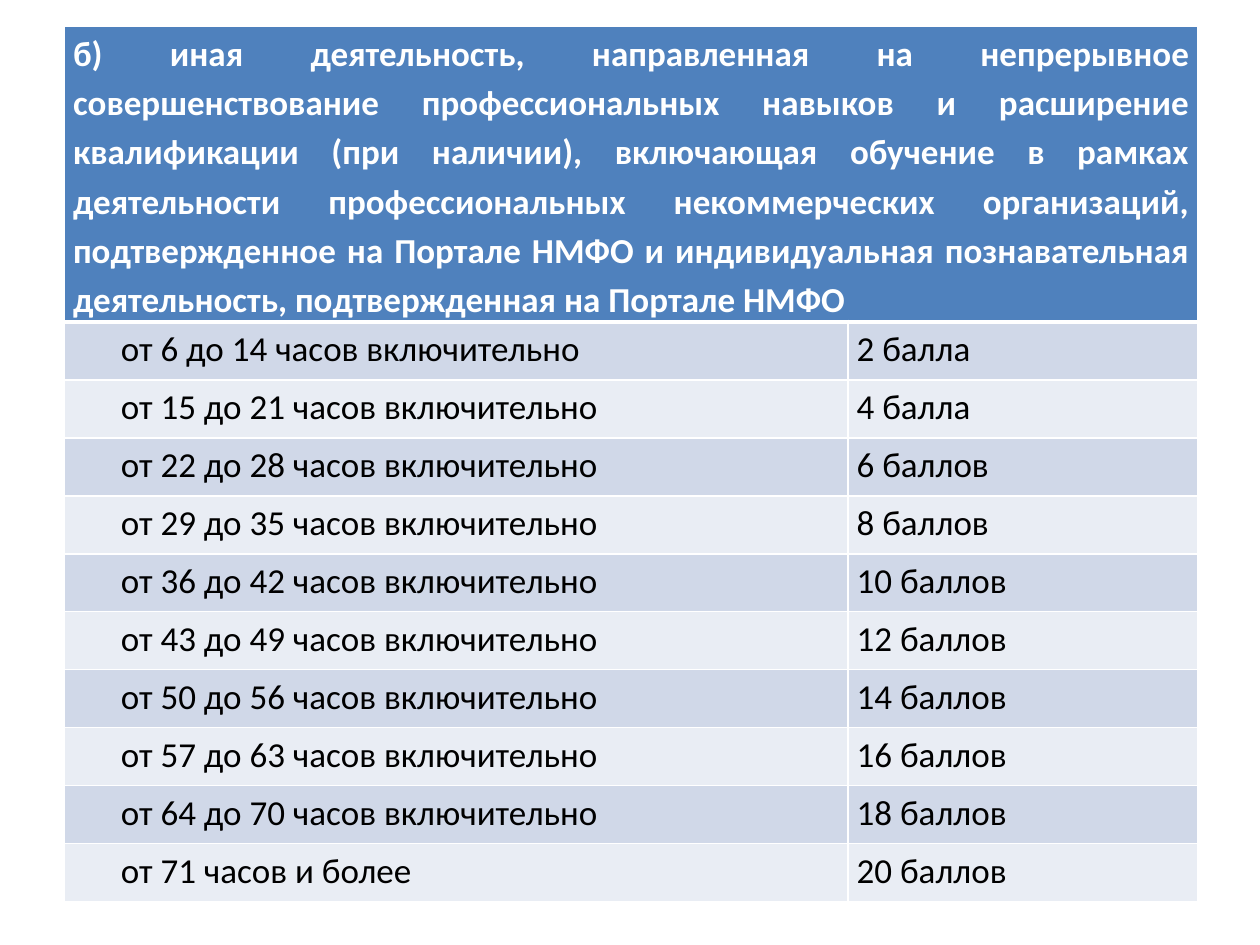
from lxml.etree import SubElement
from pptx import Presentation
from pptx.dml.color import RGBColor
from pptx.enum.text import MSO_ANCHOR as Anchor, PP_ALIGN as Align
from pptx.oxml.ns import qn
from pptx.util import Inches, Pt

FONT = "Calibri"
WHITE, BLACK, BLUE = "FFFFFF", "000000", "4F81BD"
BANDS = ("D0D8E8", "E9EDF4")
COLUMNS = (6.22, 2.78)
HEADER_HEIGHT, ROW_HEIGHT = 1.8, 0.46
THIN, THICK = 1, 3
HEADING = (
    "б) иная деятельность, направленная на непрерывное совершенствование "
    "профессиональных навыков и расширение квалификации (при наличии), "
    "включающая обучение в рамках деятельности профессиональных "
    "некоммерческих организаций, подтвержденное на Портале НМФО и "
    "индивидуальная познавательная деятельность, подтвержденная на "
    "Портале НМФО"
)
SCORES = (
    ("от 6 до 14 часов включительно", "2 балла"),
    ("от 15 до 21 часов включительно", "4 балла"),
    ("от 22 до 28 часов включительно", "6 баллов"),
    ("от 29 до 35 часов включительно", "8 баллов"),
    ("от 36 до 42 часов включительно", "10 баллов"),
    ("от 43 до 49 часов включительно", "12 баллов"),
    ("от 50 до 56 часов включительно", "14 баллов"),
    ("от 57 до 63 часов включительно", "16 баллов"),
    ("от 64 до 70 часов включительно", "18 баллов"),
    ("от 71 часов и более", "20 баллов"),
)


def color(value):
    """Turn a hex string into a colour."""
    return RGBColor.from_string(value)


def set_borders(cell, top=THIN, bottom=THIN):
    """Draw white lines on the four sides of a cell."""
    properties = cell._tc.get_or_add_tcPr()
    widths = {"a:lnL": THIN, "a:lnR": THIN, "a:lnT": top, "a:lnB": bottom}
    for side, width in widths.items():
        line = SubElement(properties, qn(side), w=str(Pt(width)))
        fill = SubElement(line, qn("a:solidFill"))
        SubElement(fill, qn("a:srgbClr"), val=WHITE)


def style_cell(cell, fill, **borders):
    """Set the borders, fill and margins of a cell."""
    set_borders(cell, **borders)
    cell.fill.solid()
    cell.fill.fore_color.rgb = color(fill)
    cell.margin_left = cell.margin_right = Inches(0.07)
    cell.margin_top = cell.margin_bottom = 0
    cell.vertical_anchor = Anchor.TOP


def write(cell, text, ink=BLACK, bold=False, align=Align.LEFT, indent=0):
    """Write one paragraph into a cell."""
    para = cell.text_frame.paragraphs[0]
    para.alignment = align
    para.line_spacing = 1.15
    if indent:
        layout = para._p.get_or_add_pPr()
        layout.set("marL", "0")
        layout.set("indent", str(Inches(indent)))
    span = para.add_run()
    span.text = text
    span.font.name = FONT
    span.font.size = Pt(20)
    span.font.bold = bold
    span.font.color.rgb = color(ink)


def add_score_table(page):
    """Add the empty table with its column widths and row heights."""
    height = HEADER_HEIGHT + ROW_HEIGHT * len(SCORES)
    table = page.shapes.add_table(
        len(SCORES) + 1, len(COLUMNS), Inches(0.51), Inches(0.21),
        Inches(sum(COLUMNS)), Inches(height),
    ).table
    for column, width in zip(table.columns, COLUMNS):
        column.width = Inches(width)
    for row in table.rows:
        row.height = Inches(ROW_HEIGHT)
    table.rows[0].height = Inches(HEADER_HEIGHT)
    return table


def fill_header(table):
    """Merge the first row and write the heading."""
    first, last = table.rows[0].cells
    first.merge(last)
    for cell in (first, last):
        style_cell(cell, BLUE, bottom=THICK)
    write(first, HEADING, ink=WHITE, bold=True, align=Align.JUSTIFY)


def fill_scores(table):
    """Write the hours and points in banded rows."""
    for index, (hours, points) in enumerate(SCORES):
        hours_cell, points_cell = table.rows[index + 1].cells
        for cell in (hours_cell, points_cell):
            style_cell(cell, BANDS[index % 2], top=THIN if index else THICK)
        write(hours_cell, hours, align=Align.JUSTIFY, indent=0.38)
        write(points_cell, points)


def main():
    """Build the slide and save the deck."""
    deck = Presentation()
    deck.slide_width, deck.slide_height = Inches(10), Inches(7.5)
    page = deck.slides.add_slide(deck.slide_layouts[6])
    table = add_score_table(page)
    fill_header(table)
    fill_scores(table)
    deck.save("out.pptx")


if __name__ == "__main__":
    main()
